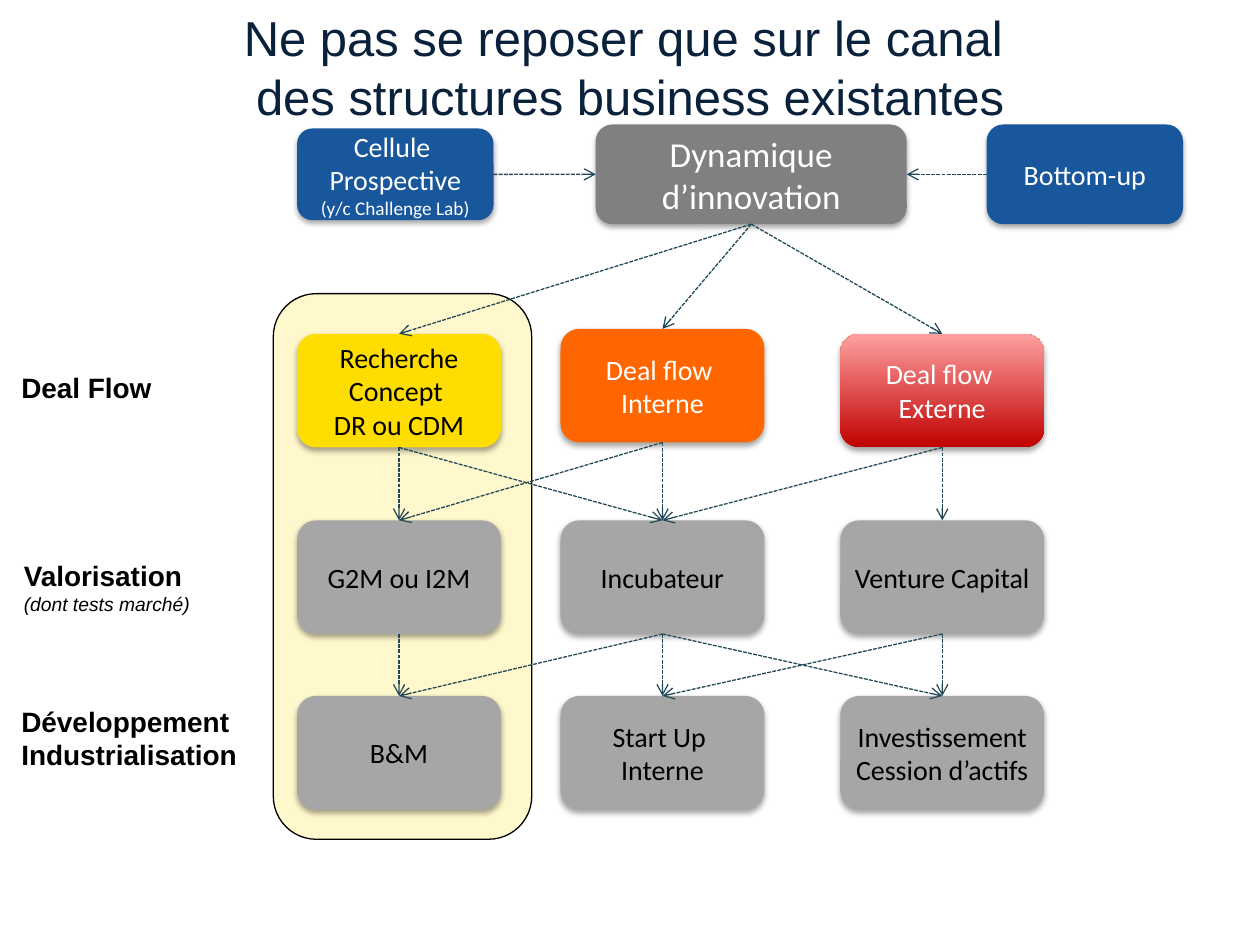
from pptx import Presentation
from pptx.dml.color import RGBColor
from pptx.enum.dml import MSO_LINE
from pptx.enum.shapes import MSO_CONNECTOR, MSO_SHAPE
from pptx.enum.text import MSO_ANCHOR, MSO_AUTO_SIZE, PP_ALIGN
from pptx.oxml import parse_xml
from pptx.oxml.ns import nsdecls, qn
from pptx.util import Cm, Pt

TOP, LEFT, BOTTOM, RIGHT = range(4)
WHITE, BLACK, GREY, BLUE = "FFFFFF", "000000", "A6A6A6", "18579B"
SHADOW = (
    f'<a:outerShdw {nsdecls("a")} blurRad="40000" dist="23000" dir="5400000" '
    'rotWithShape="0"><a:srgbClr val="000000"><a:alpha val="35000"/>'
    '</a:srgbClr></a:outerShdw>'
)


def paint(color, value):
    color.rgb = RGBColor.from_string(value)


class Deck:
    """Style of the diagram and the slide being drawn."""

    label_font = "Arial"
    box_font = "Calibri"
    link = "224957"

    def __init__(self):
        self.prs = Presentation()
        self.prs.slide_width, self.prs.slide_height = Cm(25.4), Cm(19.05)
        self.slide = self.prs.slides.add_slide(self.prs.slide_layouts[6])
        self.shapes = self.slide.shapes

    def run(self, para, text, font, size, color, bold=False, italic=False):
        run = para.add_run()
        run.text = text
        run.font.name, run.font.size = font, Pt(size)
        run.font.bold, run.font.italic = bold, italic
        paint(run.font.color, color)

    def paras(self, frame, count, align):
        """Yield the paragraphs of a frame, the first one included."""
        for i in range(count):
            para = frame.add_paragraph() if i else frame.paragraphs[0]
            para.alignment = align
            yield para

    def title(self, lines):
        frame = self.shapes.add_textbox(Cm(1.9), Cm(0.6), Cm(21.6), Cm(1.48)).text_frame
        frame.word_wrap = True
        frame.vertical_anchor = MSO_ANCHOR.MIDDLE
        para = frame.paragraphs[0]
        para.alignment = PP_ALIGN.CENTER
        for i, line in enumerate(lines):
            if i:
                para.add_line_break()
            self.run(para, line, self.label_font, 28, "09213B")

    def label(self, x, y, w, h, lines, note=None):
        frame = self.shapes.add_textbox(Cm(x), Cm(y), Cm(w), Cm(h)).text_frame
        frame.word_wrap = False
        frame.auto_size = MSO_AUTO_SIZE.SHAPE_TO_FIT_TEXT
        for para, line in zip(self.paras(frame, len(lines), PP_ALIGN.LEFT), lines):
            self.run(para, line, self.label_font, 16, BLACK, bold=True)
        if note:
            self.run(frame.add_paragraph(), note, self.label_font, 11, BLACK, italic=True)

    def round(self, x, y, w, h):
        shape = self.shapes.add_shape(
            MSO_SHAPE.ROUNDED_RECTANGLE, Cm(x), Cm(y), Cm(w), Cm(h))
        shape.shadow.inherit = False
        return shape

    def panel(self, x, y, w, h, fill):
        shape = self.round(x, y, w, h)
        shape.fill.solid()
        paint(shape.fill.fore_color, fill)
        paint(shape.line.color, BLACK)
        shape.line.width = Pt(0.75)

    def box(self, x, y, w, h, lines, fill, color=WHITE, size=16, tight=False, note=None):
        """Shadowed box; a pair of fills makes a gradient from the bottom up."""
        shape = self.round(x, y, w, h)
        shape.element.spPr.find(qn("a:effectLst")).append(parse_xml(SHADOW))
        shape.line.fill.background()
        if isinstance(fill, tuple):
            shape.fill.gradient()
            shape.fill.gradient_angle = 90
            for stop, value in zip(shape.fill.gradient_stops, fill):
                paint(stop.color, value)
        else:
            shape.fill.solid()
            paint(shape.fill.fore_color, fill)
        frame = shape.text_frame
        frame.word_wrap = True
        frame.vertical_anchor = MSO_ANCHOR.MIDDLE
        if tight:
            frame.margin_left = frame.margin_right = Cm(0.1)
        rows = [(line, size) for line in lines] + ([(note, 11)] if note else [])
        for para, (line, pts) in zip(self.paras(frame, len(rows), PP_ALIGN.CENTER), rows):
            self.run(para, line, self.box_font, pts, color)
        return shape

    def arrow(self, start, end, out=BOTTOM, into=TOP):
        line = self.shapes.add_connector(MSO_CONNECTOR.STRAIGHT, 0, 0, 0, 0)
        line.begin_connect(start, out)
        line.end_connect(end, into)
        paint(line.line.color, self.link)
        line.line.width = Pt(0.75)
        line.line.dash_style = MSO_LINE.SQUARE_DOT
        props = line.element.spPr
        props.find(qn("a:ln")).append(
            parse_xml(f'<a:tailEnd {nsdecls("a")} type="arrow"/>'))
        props.append(parse_xml(f'<a:effectLst {nsdecls("a")}/>'))


def main():
    deck = Deck()
    deck.panel(5.51, 5.92, 5.21, 11, "FFF8CC")

    deck.label(0.18, 7.34, 3.18, 0.94, ["Deal Flow"])
    deck.label(0.23, 11.13, 3.89, 1.42, ["Valorisation"], "(dont tests marché)")
    deck.label(0.18, 14.07, 4.93, 1.63, ["Développement", "Industrialisation"])

    cell = deck.box(5.99, 2.59, 3.96, 1.85, ["Cellule ", "Prospective"], BLUE,
                    note="(y/c Challenge Lab)")
    core = deck.box(12.01, 2.51, 6.27, 2.01, ["Dynamique d’innovation"], "808080", size=20)
    base = deck.box(19.89, 2.51, 3.96, 2.01, ["Bottom-up"], BLUE)

    cols, wide, high = (5.99, 11.3, 16.94), 4.11, 2.29
    flows = [
        (6.73, ["Recherche Concept ", "DR ou CDM"], "FFDD00", BLACK),
        (6.63, ["Deal flow ", "Interne"], "FF6600", WHITE),
        (6.73, ["Deal flow ", "Externe"], ("C00000", "FFA0A0"), WHITE),
    ]
    first = [deck.box(x, y, wide, high, lines, fill, color)
             for x, (y, lines, fill, color) in zip(cols, flows)]

    stages = [
        (10.49, [["G2M ou I2M"], ["Incubateur"], ["Venture Capital"]]),
        (14.03, [["B&M"], ["Start Up ", "Interne"], ["Investissement", "Cession d’actifs"]]),
    ]
    second, third = [
        [deck.box(x, y, wide, high, lines, GREY, BLACK, tight=True)
         for x, lines in zip(cols, texts)]
        for y, texts in stages
    ]

    deck.arrow(cell, core, RIGHT, LEFT)
    deck.arrow(base, core, LEFT, RIGHT)
    for flow in first:
        deck.arrow(core, flow)
    for i, j in [(0, 0), (0, 1), (1, 0), (1, 1), (2, 1), (2, 2)]:
        deck.arrow(first[i], second[j])
    for i, j in [(0, 0), (1, 0), (1, 1), (1, 2), (2, 1), (2, 2)]:
        deck.arrow(second[i], third[j])

    deck.title(["Ne pas se reposer que sur le canal ", "des structures business existantes"])
    deck.prs.save("out.pptx")


if __name__ == "__main__":
    main()
